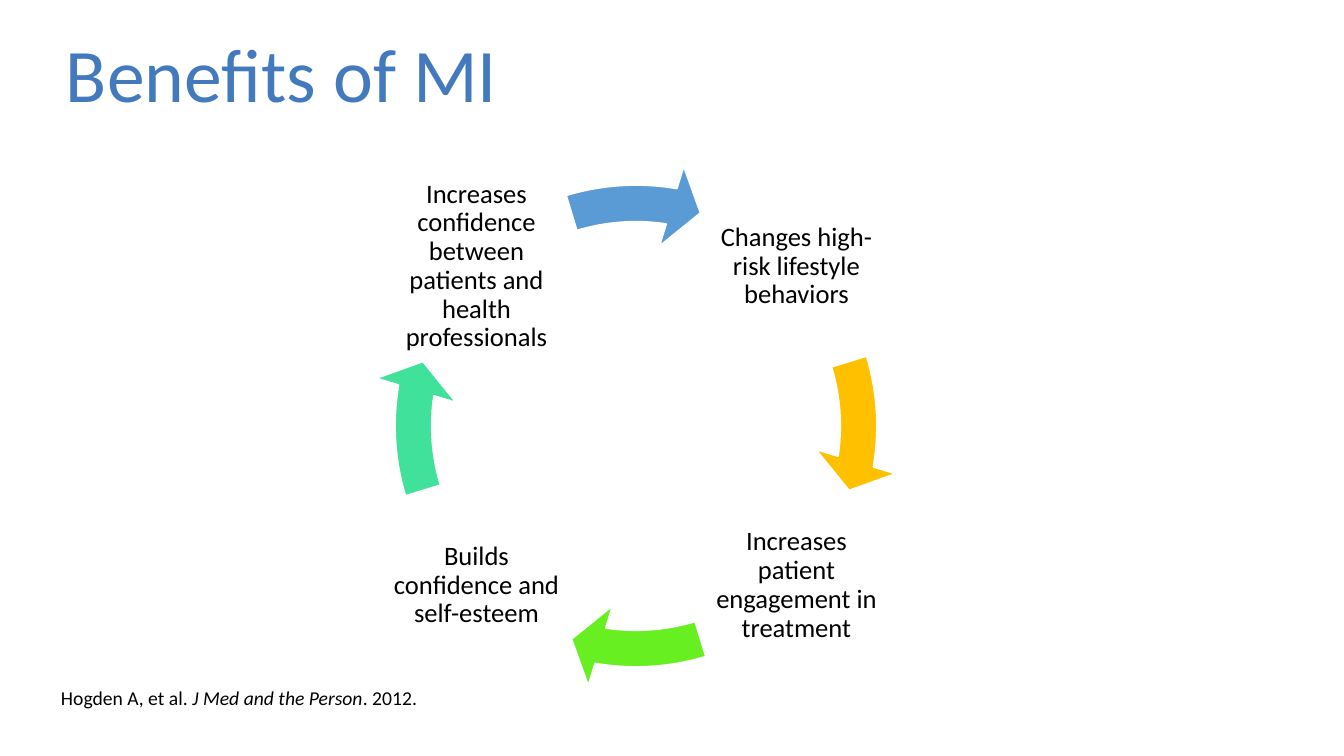
from pptx import Presentation
from pptx.dml.color import RGBColor
from pptx.enum.shapes import MSO_SHAPE
from pptx.enum.text import MSO_ANCHOR, PP_ALIGN
from pptx.util import Emu, Pt

THEME = {
    "font": "Calibri",
    "title_size": 54,
    "step_size": 19,
    "citation_size": 14,
    "title": "4379BD",
    "text": "000000",
    "outline": "FFFFFF",
    "arrows": ["FFC000", "67EF21", "3FE19B", "5B9BD5"],
}


def px(length):
    return Emu(round(length * 914400 / 100.8))


def add_text(text, left, top, width, height, size, color=THEME["text"],
             align=PP_ALIGN.LEFT, anchor=MSO_ANCHOR.TOP, spacing=1.0,
             inset_x=10, inset_y=5, italic_part=None):
    box = slide.shapes.add_textbox(px(left), px(top), px(width), px(height))
    frame = box.text_frame
    frame.word_wrap = True
    frame.vertical_anchor = anchor
    frame.margin_left = frame.margin_right = px(inset_x)
    frame.margin_top = frame.margin_bottom = px(inset_y)
    paragraph = frame.paragraphs[0]
    paragraph.alignment = align
    paragraph.line_spacing = spacing
    before, italic, after = text.partition(italic_part) if italic_part else (text, "", "")
    for part in filter(None, (before, italic, after)):
        run = paragraph.add_run()
        run.text = part
        run.font.name = THEME["font"]
        run.font.size = Pt(size)
        run.font.italic = part == italic_part
        run.font.color.rgb = RGBColor.from_string(color)


presentation = Presentation()
presentation.slide_width = px(1344)
presentation.slide_height = px(756)
slide = presentation.slides.add_slide(presentation.slide_layouts[6])

add_text("Benefits of MI", 56, 5, 1159, 146, THEME["title_size"],
         color=THEME["title"], anchor=MSO_ANCHOR.MIDDLE, spacing=0.9)

LEFT, RIGHT, TOP, BOTTOM = 383, 703, 173, 492
steps = [
    ("Changes high-risk lifestyle behaviors", RIGHT, TOP),
    ("Increases patient engagement in treatment", RIGHT, BOTTOM),
    ("Builds confidence and self-esteem", LEFT, BOTTOM),
    ("Increases confidence between patients and health professionals", LEFT, TOP),
]
ADJUSTMENT_PER_DEGREE = 0.6

for index, (step, left, top) in enumerate(steps):
    add_text(step, left, top, 187, 187, THEME["step_size"], align=PP_ALIGN.CENTER,
             anchor=MSO_ANCHOR.MIDDLE, spacing=0.9, inset_x=3, inset_y=3)
    arrow = slide.shapes.add_shape(MSO_SHAPE.CIRCULAR_ARROW, px(371), px(161), px(530), px(530))
    arrow.shadow.inherit = False
    arrow.fill.solid()
    arrow.fill.fore_color.rgb = RGBColor.from_string(THEME["arrows"][index])
    arrow.line.color.rgb = RGBColor.from_string(THEME["outline"])
    arrow.line.width = Pt(1.5)
    turn = 90 * index
    head_angle = 9.14 + turn
    tail_angle = (343.1 + turn) % 360
    arrow.adjustments[0] = 0.07
    arrow.adjustments[1] = 7.76 * ADJUSTMENT_PER_DEGREE
    arrow.adjustments[2] = head_angle * ADJUSTMENT_PER_DEGREE
    arrow.adjustments[3] = tail_angle * ADJUSTMENT_PER_DEGREE
    arrow.adjustments[4] = 0.08

add_text("Hogden A, et al. J Med and the Person. 2012.", 51, 681, 1242, 34,
         THEME["citation_size"], italic_part="J Med and the Person")

presentation.save("out.pptx")
